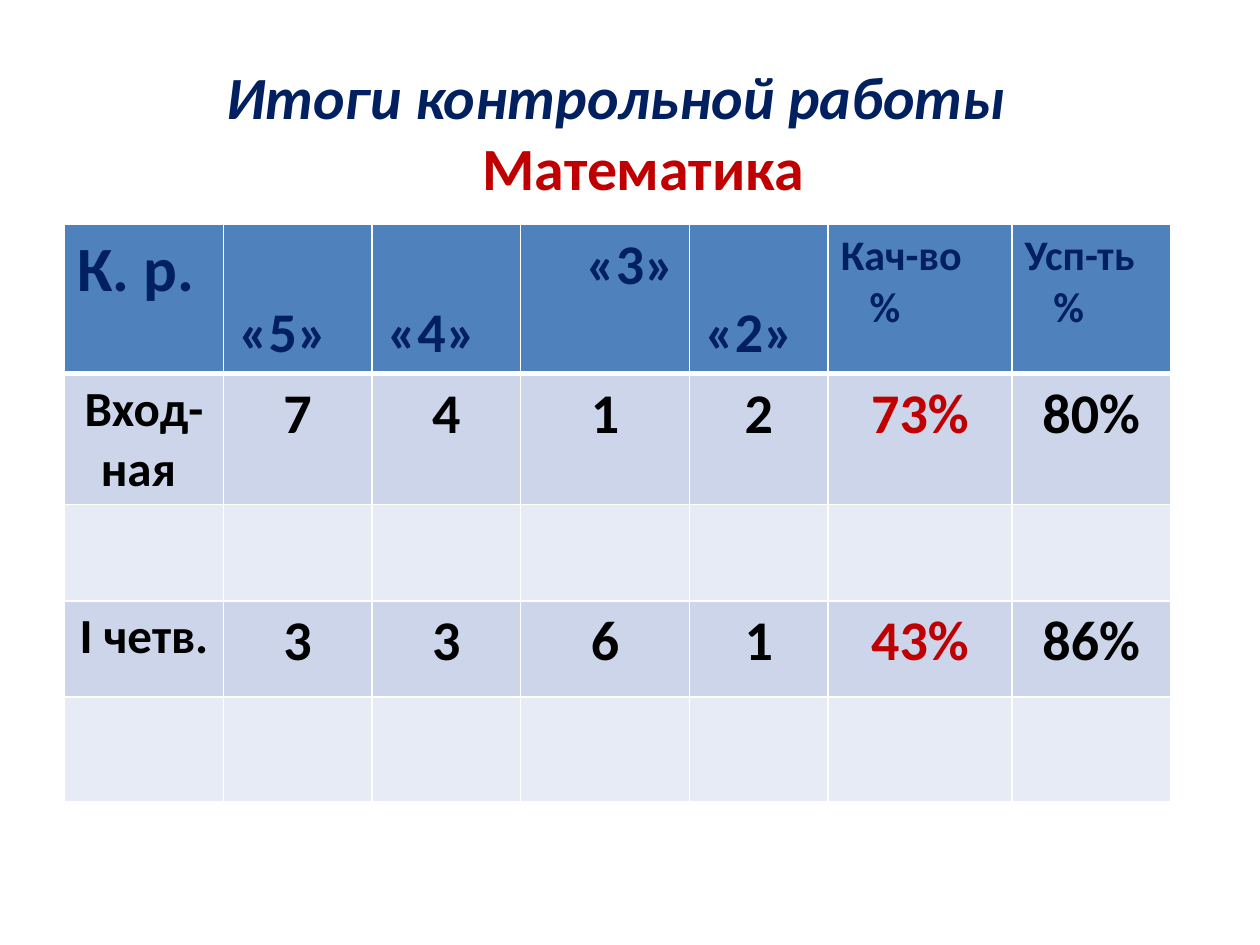
"""Build the slide with the mathematics test results table."""
from dataclasses import dataclass

from lxml.etree import SubElement
from pptx import Presentation
from pptx.dml.color import RGBColor
from pptx.enum.text import MSO_ANCHOR, PP_ALIGN
from pptx.oxml.ns import qn
from pptx.util import Pt


@dataclass(frozen=True)
class Theme:
    font: str = "Calibri"
    navy: str = "002060"
    red: str = "C00000"
    black: str = "000000"
    white: str = "FFFFFF"
    header_fill: str = "4F81BD"
    odd_fill: str = "CCD5EA"
    even_fill: str = "E7EBF5"
    title_size: float = 34.2
    corner_size: int = 36
    value_size: int = 32
    label_size: int = 28
    measure_size: int = 24


theme = Theme()


def add_text(paragraph, text, size, color, italic=False, left=0, right=0):
    run = paragraph.add_run()
    run.text = text
    run.font.name = theme.font
    run.font.size = Pt(size)
    run.font.bold = True
    run.font.italic = italic
    run.font.color.rgb = RGBColor.from_string(color)
    properties = paragraph._p.get_or_add_pPr()
    properties.set("marL", str(Pt(left)))
    properties.set("marR", str(Pt(right)))


def style_cell(cell, fill, top, bottom):
    properties = cell._tc.get_or_add_tcPr()
    for side, width in (("L", 1), ("R", 1), ("T", top), ("B", bottom)):
        line = SubElement(properties, qn(f"a:ln{side}"), w=str(Pt(width)))
        line_fill = SubElement(line, qn("a:solidFill"))
        SubElement(line_fill, qn("a:srgbClr"), val=theme.white)
    cell.fill.solid()
    cell.fill.fore_color.rgb = RGBColor.from_string(fill)


presentation = Presentation()
presentation.slide_width = Pt(720)
presentation.slide_height = Pt(540)
slide = presentation.slides.add_slide(presentation.slide_layouts[6])

title = slide.shapes.add_textbox(Pt(54), Pt(0), Pt(612), Pt(116))
title_frame = title.text_frame
title_frame.word_wrap = True
title_frame.vertical_anchor = MSO_ANCHOR.BOTTOM
title_frame.margin_left = title_frame.margin_right = title_frame.margin_bottom = 0
heading = title_frame.paragraphs[0]
subject = title_frame.add_paragraph()
heading.alignment = subject.alignment = PP_ALIGN.CENTER
add_text(heading, "Итоги контрольной работы", theme.title_size, theme.navy, italic=True, right=16)
add_text(subject, "Математика", theme.title_size, theme.red, left=15)

column_widths = [90.7, 85, 85, 96.5, 79.2, 105, 90.7]
row_heights = [85, 75, 55, 55, 60]
table = slide.shapes.add_table(
    len(row_heights), len(column_widths), Pt(36.9), Pt(128.4),
    Pt(sum(column_widths)), Pt(sum(row_heights)),
).table
table.first_row = False
table.horz_banding = False
for column, width in zip(table.columns, column_widths):
    column.width = Pt(width)

row_fills = [theme.header_fill] + [theme.odd_fill, theme.even_fill] * 2
for row_index, (row, height) in enumerate(zip(table.rows, row_heights)):
    row.height = Pt(height)
    for cell in row.cells:
        style_cell(
            cell, row_fills[row_index],
            top=3 if row_index == 1 else 1,
            bottom=3 if row_index == 0 else 1,
        )

corner = table.cell(0, 0).text_frame.paragraphs[0]
add_text(corner, "К. р.", theme.corner_size, theme.navy)
for column_index, grade in enumerate(("«5»", "«4»", "«3»", "«2»"), start=1):
    cell = table.cell(0, column_index)
    is_top = grade == "«3»"
    cell.vertical_anchor = MSO_ANCHOR.TOP if is_top else MSO_ANCHOR.BOTTOM
    add_text(
        cell.text_frame.paragraphs[0], grade, theme.value_size, theme.navy,
        left=30 if is_top else 1.5,
    )
for column_index, measure in enumerate(("Кач-во", "Усп-ть"), start=5):
    text_frame = table.cell(0, column_index).text_frame
    add_text(text_frame.paragraphs[0], measure, theme.measure_size, theme.navy)
    add_text(text_frame.add_paragraph(), "%", theme.measure_size, theme.navy, left=16.5)

results = {
    1: ["Вход-ная ", "7", "4", "1", "2", "73%", "80%"],
    3: ["I четв.", "3", "3", "6", "1", "43%", "86%"],
}
for row_index, values in results.items():
    for column_index, value in enumerate(values):
        paragraph = table.cell(row_index, column_index).text_frame.paragraphs[0]
        paragraph.alignment = PP_ALIGN.CENTER
        size = theme.label_size if column_index == 0 else theme.value_size
        color = theme.red if column_index == 5 else theme.black
        add_text(paragraph, value, size, color)

presentation.save("out.pptx")
